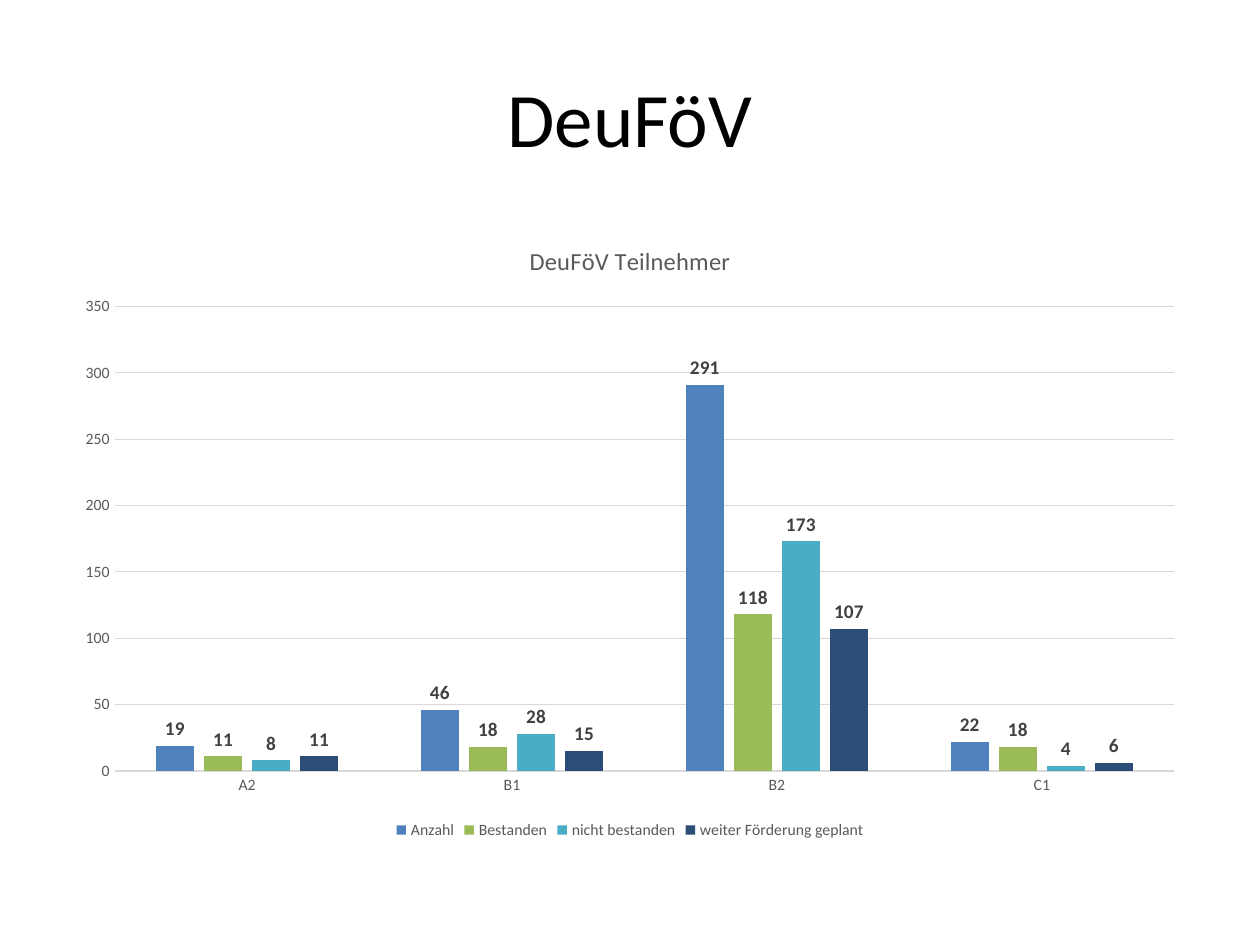
from dataclasses import dataclass

from pptx import Presentation
from pptx.chart.data import CategoryChartData
from pptx.dml.color import RGBColor
from pptx.enum import chart as ch, text
from pptx.util import Cm, Pt


@dataclass(frozen=True)
class Theme:
    face: str = "Calibri"
    ink: str = "000000"
    muted: str = "595959"
    label: str = "404040"
    grid: str = "D9D9D9"
    bars: tuple = ("4F81BD", "9BBB59", "4BACC6", "2C4D75")
    title_pt: int = 44
    chart_title_pt: int = 14
    chart_pt: int = 10
    axis_pt: int = 9
    label_pt: int = 11
    line_pt: float = 0.75


THEME = Theme()
LEVELS = ("A2", "B1", "B2", "C1")
RESULTS = {
    "Anzahl": (19, 46, 291, 22),
    "Bestanden": (11, 18, 118, 18),
    "nicht bestanden": (8, 28, 173, 4),
    "weiter Förderung geplant": (11, 15, 107, 6),
}


def set_font(font, size, color, bold=False):
    font.name = THEME.face
    font.size = Pt(size)
    font.bold = bold
    font.color.rgb = RGBColor.from_string(color)


def set_line(line):
    line.color.rgb = RGBColor.from_string(THEME.grid)
    line.width = Pt(THEME.line_pt)


def add_title(s, title):
    sp = s.shapes.add_textbox(Cm(1.27), Cm(0.76), Cm(22.86), Cm(3.18))
    tf = sp.text_frame
    tf.word_wrap = True
    tf.vertical_anchor = text.MSO_ANCHOR.MIDDLE
    p = tf.paragraphs[0]
    p.alignment = text.PP_ALIGN.CENTER
    r = p.add_run()
    r.text = title
    set_font(r.font, THEME.title_pt, THEME.ink)


def style_axes(chart):
    for axis in (chart.category_axis, chart.value_axis):
        axis.major_tick_mark = axis.minor_tick_mark = ch.XL_TICK_MARK.NONE
        set_font(axis.tick_labels.font, THEME.axis_pt, THEME.muted)
    set_line(chart.category_axis.format.line)
    values = chart.value_axis
    values.format.line.fill.background()
    values.has_major_gridlines = True
    set_line(values.major_gridlines.format.line)
    values.minimum_scale, values.maximum_scale, values.major_unit = 0, 350, 50


def style_series(series, color):
    series.invert_if_negative = False
    series.format.fill.solid()
    series.format.fill.fore_color.rgb = RGBColor.from_string(color)
    labels = series.data_labels
    labels.show_value = True
    labels.position = ch.XL_LABEL_POSITION.OUTSIDE_END
    set_font(labels.font, THEME.label_pt, THEME.label, bold=True)


def add_column_chart(s, title):
    data = CategoryChartData()
    data.categories = LEVELS
    for name, values in RESULTS.items():
        data.add_series(name, values)
    chart = s.shapes.add_chart(
        ch.XL_CHART_TYPE.COLUMN_CLUSTERED,
        Cm(1.27), Cm(4.45), Cm(22.86), Cm(12.57), data,
    ).chart
    set_font(chart.font, THEME.chart_pt, THEME.ink)

    chart.has_title = True
    r = chart.chart_title.text_frame.paragraphs[0].add_run()
    r.text = title
    set_font(r.font, THEME.chart_title_pt, THEME.muted)
    chart.chart_title.include_in_layout = False

    chart.has_legend = True
    chart.legend.position = ch.XL_LEGEND_POSITION.BOTTOM
    chart.legend.include_in_layout = False
    set_font(chart.legend.font, THEME.axis_pt, THEME.muted)

    style_axes(chart)
    plot = chart.plots[0]
    plot.vary_by_categories = False
    plot.gap_width = 219
    plot.overlap = -27
    for series, color in zip(plot.series, THEME.bars):
        style_series(series, color)


def main():
    prs = Presentation()
    prs.slide_width, prs.slide_height = Cm(25.4), Cm(19.05)
    s = prs.slides.add_slide(prs.slide_layouts[6])
    add_title(s, "DeuFöV")
    add_column_chart(s, "DeuFöV Teilnehmer")
    prs.save("out.pptx")


if __name__ == "__main__":
    main()
